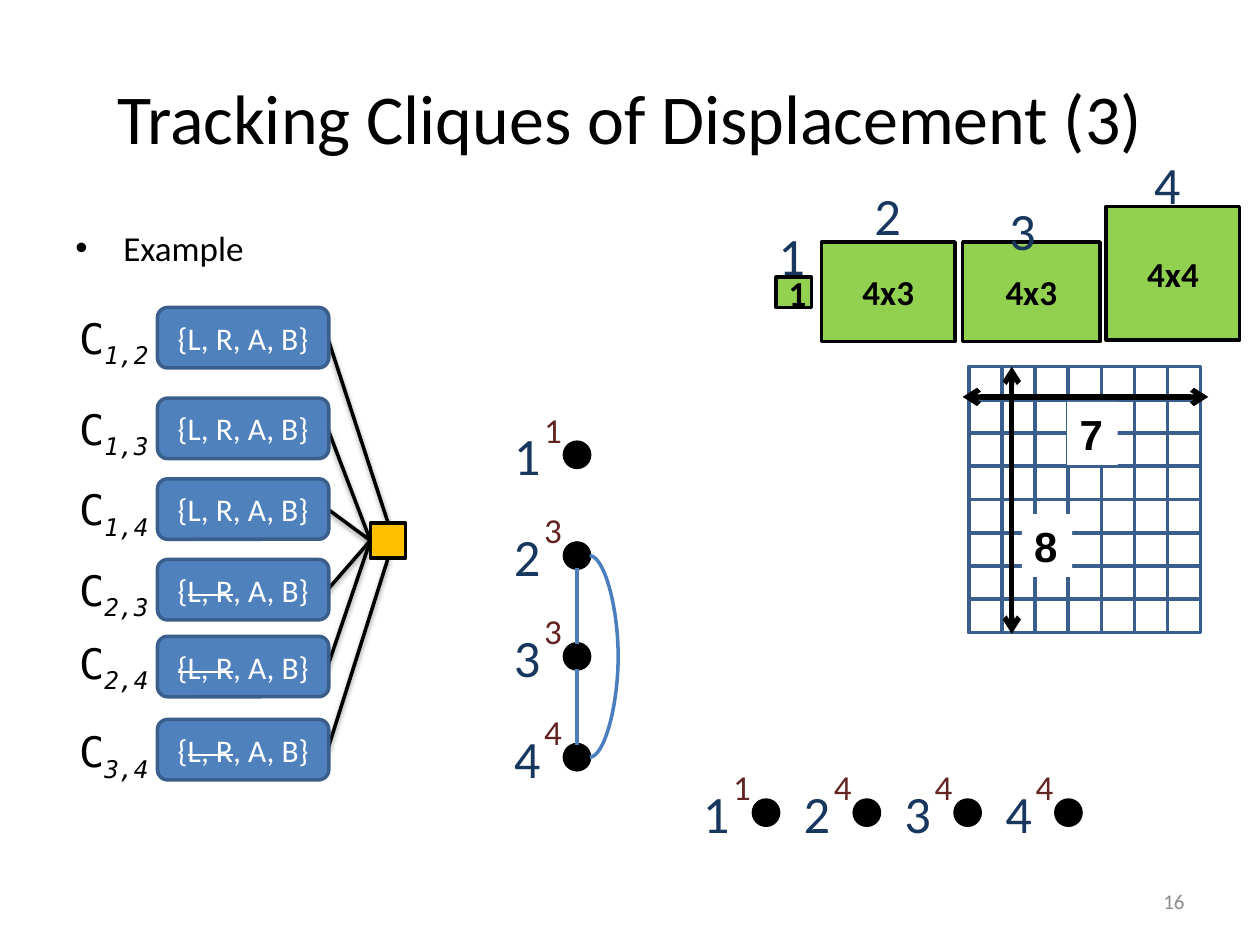
"""Build a slide on tracking cliques of displacement for rectangle packing."""
from dataclasses import dataclass
from typing import Any

import pptx
import pptx.dml.color
import pptx.enum.shapes
import pptx.enum.text
import pptx.oxml.ns
import pptx.util
from lxml import etree

Inches = pptx.util.Inches
Pt = pptx.util.Pt
RGBColor = pptx.dml.color.RGBColor
SHAPE = pptx.enum.shapes.MSO_SHAPE
CONNECTOR = pptx.enum.shapes.MSO_CONNECTOR
ALIGN = pptx.enum.text.PP_ALIGN
ANCHOR = pptx.enum.text.MSO_ANCHOR
qn = pptx.oxml.ns.qn

BLACK = RGBColor(0x00, 0x00, 0x00)
WHITE = RGBColor(0xFF, 0xFF, 0xFF)
GREEN = RGBColor(0x92, 0xD0, 0x50)
AMBER = RGBColor(0xFF, 0xC0, 0x00)
BLUE = RGBColor(0x4F, 0x81, 0xBD)
EDGE_BLUE = RGBColor(0x3A, 0x5F, 0x8C)
CURVE_BLUE = RGBColor(0x4B, 0x7E, 0xBC)
NAVY = RGBColor(0x17, 0x37, 0x5E)
MAROON = RGBColor(0x63, 0x25, 0x23)
GRAY = RGBColor(0x8C, 0x8C, 0x8C)

Box = tuple[float, float, float, float]
Point = tuple[float, float]


@dataclass(frozen=True)
class Style:
    color: RGBColor
    size: float
    name: str = "Calibri"
    bold: bool = False


@dataclass(frozen=True)
class Rectangle:
    number: str
    number_at: Point
    label: str
    box: Box


@dataclass(frozen=True)
class Variable:
    pair: str
    top: float
    label_top: float
    plain: str = ""
    struck: str = ""
    rest: str = "{L, R, A, B}"


@dataclass(frozen=True)
class Node:
    number: str
    size: str
    left: float
    top: float


TITLE = Style(BLACK, 40)
BODY = Style(BLACK, 20)
RECTANGLE = Style(BLACK, 20, bold=True)
DIMENSION = Style(BLACK, 24, "Arial", True)
CLIQUE = Style(BLACK, 24, "DejaVu Sans Mono")
DOMAIN = Style(WHITE, 18)
NUMBER = Style(NAVY, 30)
SIZE = Style(MAROON, 20)
PAGE = Style(GRAY, 12)

RECTANGLES = [
    Rectangle("4", (9.06, 1.16), "4x4", (8.78, 1.64, 1.06, 1.06)),
    Rectangle("2", (6.84, 1.4), "4x3", (6.52, 1.92, 1.06, 0.79)),
    Rectangle("3", (7.91, 1.52), "4x3", (7.64, 1.92, 1.09, 0.79)),
    Rectangle("1", (6.08, 1.72), "1", (6.16, 2.2, 0.28, 0.24)),
]
VARIABLES = [
    Variable("1,2", 2.44, 2.43),
    Variable("1,3", 3.16, 3.15),
    Variable("1,4", 3.8, 3.79),
    Variable("2,3", 4.44, 4.43, "{", "L, R", ", A, B}"),
    Variable("2,4", 5.05, 5.01, "", "{L, R", ", A, B}"),
    Variable("3,4", 5.71, 5.71, "{", "L, R", ", A, B}"),
]
GRAPH = [Node(str(i + 1), size, 4.48, 3.51 + 0.8 * i) for i, size in enumerate("1334")]
ROW = [Node(str(i + 1), size, 5.98 + 0.8 * i, 6.35) for i, size in enumerate("1444")]


def apply(target: Any, values: dict[str, Any]) -> None:
    for attribute, value in values.items():
        setattr(target, attribute, value)


def add_run(paragraph: Any, text: str, style: Style, **extra: str) -> None:
    run = paragraph.add_run()
    run.text = text
    apply(run.font, {"name": style.name, "size": Pt(style.size), "bold": style.bold})
    run.font.color.rgb = style.color
    for attribute, value in extra.items():
        run.font._element.set(attribute, value)


def add_text(slide: Any, box: Box, text: str, style: Style,
             align: Any = ALIGN.LEFT, anchor: Any = ANCHOR.TOP) -> Any:
    frame = slide.shapes.add_textbox(*map(Inches, box)).text_frame
    apply(frame, {"word_wrap": True, "vertical_anchor": anchor})
    paragraph = frame.paragraphs[0]
    paragraph.alignment = align
    add_run(paragraph, text, style)
    return paragraph


def add_item(slide: Any, box: Box, text: str, style: Style, bullet: str = "") -> None:
    properties = add_text(slide, box, text, style)._p.get_or_add_pPr()
    apply_indent = {"marL": Inches(0.38), "indent": Inches(-0.38)}
    for attribute, value in apply_indent.items():
        properties.set(attribute, str(int(value)))
    spacing = etree.SubElement(properties, qn("a:spcBef"))
    etree.SubElement(spacing, qn("a:spcPct"), val="20000")
    if bullet:
        etree.SubElement(properties, qn("a:buFont"), typeface="Arial")
        etree.SubElement(properties, qn("a:buChar"), char=bullet)


def add_block(slide: Any, kind: Any, box: Box, fill: RGBColor | None,
              line: RGBColor | None) -> Any:
    block = slide.shapes.add_shape(kind, *map(Inches, box))
    block.shadow.inherit = False
    for part, color in ((block.fill, fill), (block.line.fill, line)):
        if color is None:
            part.background()
        else:
            part.solid()
            part.fore_color.rgb = color
    if line is not None:
        block.line.width = Pt(2)
    paragraph = block.text_frame.paragraphs[0]
    paragraph.alignment = ALIGN.CENTER
    return block


def add_line(slide: Any, start: Point, end: Point, color: RGBColor = BLACK, width: float = 2,
             kind: Any = CONNECTOR.STRAIGHT, arrows: bool = False, shadow: bool = False) -> Any:
    line = slide.shapes.add_connector(kind, *map(Inches, start + end))
    line.line.color.rgb = color
    line.line.width = Pt(width)
    if arrows:
        for tag in ("a:headEnd", "a:tailEnd"):
            etree.SubElement(line.line._get_or_add_ln(), qn(tag), type="arrow")
    effects = etree.SubElement(line._element.spPr, qn("a:effectLst"))
    if shadow:
        outer = etree.SubElement(effects, qn("a:outerShdw"), blurRad=str(Pt(3.1)),
                                 dist=str(Pt(1.6)), dir="5400000", rotWithShape="0")
        tint = etree.SubElement(outer, qn("a:srgbClr"), val="000000")
        etree.SubElement(tint, qn("a:alpha"), val="38000")
    return line


def draw_rectangle(slide: Any, item: Rectangle) -> None:
    block = add_block(slide, SHAPE.RECTANGLE, item.box, GREEN, BLACK)
    add_run(block.text_frame.paragraphs[0], item.label, RECTANGLE)
    add_item(slide, (*item.number_at, 0.42, 0.53), item.number, NUMBER)


def draw_grid(slide: Any, columns: int = 7, rows: int = 8) -> None:
    left, top, width, height = 7.69, 2.91, 1.84, 2.11
    add_block(slide, SHAPE.RECTANGLE, (left, top, width, height), None, EDGE_BLUE)
    cell_width, cell_height = width / columns, height / rows
    for column in range(columns):
        for row in range(rows):
            cell = (left + column * cell_width, top + row * cell_height, cell_width, cell_height)
            add_block(slide, SHAPE.RECTANGLE, cell, None, EDGE_BLUE)
    for start, end, corner, count in (((7.64, 3.15), (9.59, 3.15), (8.47, 3.19), columns),
                                      ((8.03, 2.91), (8.03, 5.03), (8.11, 4.08), rows)):
        add_line(slide, start, end, width=3, arrows=True)
        block = add_block(slide, SHAPE.RECTANGLE, (*corner, 0.4, 0.5), WHITE, None)
        block.text_frame.vertical_anchor = ANCHOR.TOP
        block.text_frame.paragraphs[0].alignment = ALIGN.LEFT
        add_run(block.text_frame.paragraphs[0], str(count), DIMENSION)


def draw_variable(slide: Any, item: Variable) -> None:
    hubs = {"1,2": (3.08, 4.15), "3,4": (3.08, 4.43)}
    add_line(slide, hubs.get(item.pair, (2.94, 4.29)), (2.6, item.top + 0.24), shadow=True)
    block = add_block(slide, SHAPE.ROUNDED_RECTANGLE, (1.25, item.top, 1.36, 0.48), BLUE, EDGE_BLUE)
    domain = block.text_frame.paragraphs[0]
    for text, strike in ((item.plain, "noStrike"), (item.struck, "sngStrike"),
                         (item.rest, "noStrike")):
        if text:
            add_run(domain, text, DOMAIN, strike=strike)
    clique = add_text(slide, (0.53, item.label_top, 0.92, 0.5), "C", CLIQUE)
    add_run(clique, item.pair, CLIQUE, i="1", baseline="-25000")


def draw_node(slide: Any, node: Node) -> None:
    add_block(slide, SHAPE.OVAL, (node.left, node.top, 0.2, 0.2), BLACK, BLACK)
    add_item(slide, (node.left - 0.5, node.top - 0.2, 0.42, 0.53), node.number, NUMBER)
    add_item(slide, (node.left - 0.26, node.top - 0.32, 0.32, 0.4), node.size, SIZE)


def draw_links(slide: Any) -> None:
    for top in (4.51, 5.31):
        add_line(slide, (4.58, top), (4.58, top + 0.6), CURVE_BLUE, kind=CONNECTOR.CURVE)
    arc = add_line(slide, (4.68, 4.41), (4.68, 6.01), CURVE_BLUE, kind=CONNECTOR.CURVE)
    arc.width = pptx.util.Emu(1588)
    adjustments = arc._element.spPr.find(qn("a:prstGeom")).get_or_add_avLst()
    etree.SubElement(adjustments, qn("a:gd"), name="adj1", fmla="val 14395500")


def main() -> None:
    deck = pptx.Presentation()
    apply(deck, {"slide_width": Inches(10), "slide_height": Inches(7.5)})
    slide = deck.slides.add_slide(deck.slide_layouts[5])
    title = slide.shapes.title
    apply(title, {"left": Inches(0.5), "top": Inches(0.3),
                  "width": Inches(9), "height": Inches(1.25)})
    title.text_frame.vertical_anchor = ANCHOR.MIDDLE
    title.text_frame.paragraphs[0].alignment = ALIGN.CENTER
    add_run(title.text_frame.paragraphs[0], "Tracking Cliques of Displacement (3)", TITLE)
    add_item(slide, (0.5, 1.75, 1.78, 0.48), "Example", BODY, "•")
    for rectangle in RECTANGLES:
        draw_rectangle(slide, rectangle)
    draw_grid(slide)
    for variable in VARIABLES:
        draw_variable(slide, variable)
    add_block(slide, SHAPE.RECTANGLE, (2.94, 4.15, 0.28, 0.28), AMBER, BLACK)
    for node in GRAPH + ROW:
        draw_node(slide, node)
    draw_links(slide)
    add_text(slide, (7.17, 6.95, 2.33, 0.4), "16", PAGE, ALIGN.RIGHT, ANCHOR.MIDDLE)
    deck.save("out.pptx")


if __name__ == "__main__":
    main()
